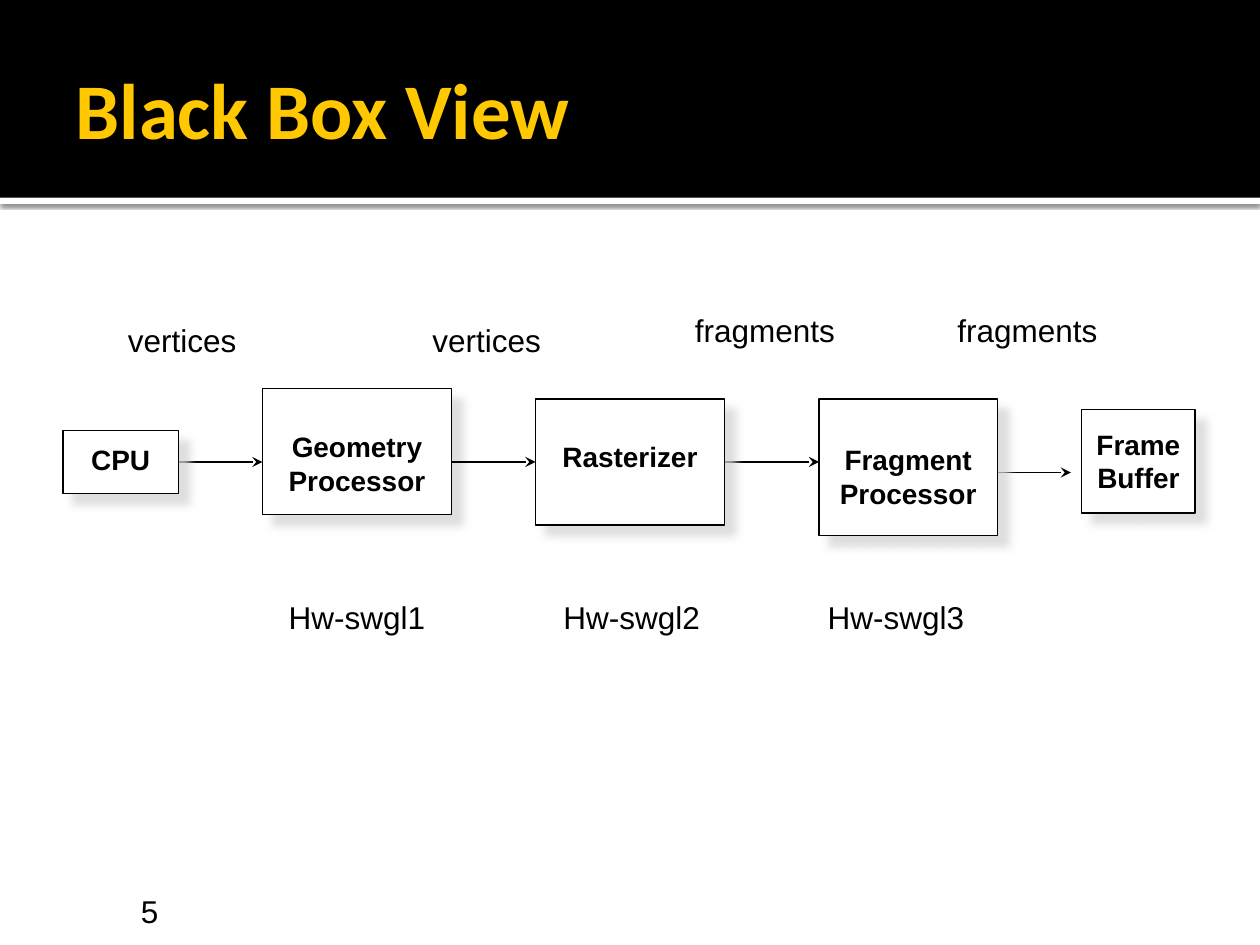
"""Build the Black Box View slide of a graphics pipeline."""
import pptx
import pptx.dml.color
import pptx.enum.shapes
import pptx.enum.text
import pptx.oxml
import pptx.oxml.ns
import pptx.util

Pt = pptx.util.Pt
RGBColor = pptx.dml.color.RGBColor
ANCHOR = pptx.enum.text.MSO_ANCHOR
ALIGN = pptx.enum.text.PP_ALIGN

BLACK = RGBColor(0x00, 0x00, 0x00)
WHITE = RGBColor(0xFF, 0xFF, 0xFF)
GOLD = RGBColor(0xFF, 0xC8, 0x00)
SHADOW_GRAY = RGBColor(0xD4, 0xD4, 0xD6)

STAGES = [
    ((150, 222, 108, 72), ["Geometry", "Processor"], 20),
    ((36, 246, 66, 36), ["CPU"], 3.5),
    ((306, 228, 108, 72), ["Rasterizer"], 19.5),
    ((468, 228, 102, 78), ["Fragment", "Processor"], 21.5),
    ((618, 234, 65, 59), ["Frame", "Buffer"], 6.5),
]
ARROWS = [(102, 150, 264), (258, 306, 264), (414, 468, 264), (570, 612, 270)]
FLOW_LABELS = [
    ("vertices", (66, 180, 89, 36)),
    ("vertices", (240, 180, 89, 36)),
    ("fragments", (390, 174, 110, 36)),
    ("fragments", (540, 174, 110, 36)),
]
HARDWARE_LABELS = [
    ("Hw-swgl1", (150, 338, 108, 29)),
    ("Hw-swgl2", (307, 338, 108, 29)),
    ("Hw-swgl3", (458, 338, 108, 29)),
]


def points(box):
    """Turn a box of numbers into lengths."""
    return [Pt(length) for length in box]


def add_effects(shape, xml=""):
    """Give a shape an effect list with the given content."""
    shape.element.spPr.append(pptx.oxml.parse_xml(
        f'<a:effectLst {pptx.oxml.ns.nsdecls("a")}>{xml}</a:effectLst>'))


def add_shadow(shape, color, opacity, blur, distance, angle):
    """Cast an outer shadow from a shape."""
    add_effects(shape, (
        f'<a:outerShdw blurRad="{Pt(blur)}" dist="{Pt(distance)}" '
        f'dir="{angle * 60000}" algn="ctr" rotWithShape="0">'
        f'<a:srgbClr val="{color}"><a:alpha val="{opacity * 1000}"/></a:srgbClr>'
        '</a:outerShdw>'))


def add_rectangle(shapes, box, fill):
    """Add a plain filled rectangle."""
    rectangle = shapes.add_shape(
        pptx.enum.shapes.MSO_SHAPE.RECTANGLE, *points(box))
    rectangle.fill.solid()
    rectangle.fill.fore_color.rgb = fill
    rectangle.line.fill.background()
    return rectangle


def add_text(shapes, box, lines, size=18, bold=False, align=ALIGN.LEFT, wrap=False):
    """Add black Arial text, one paragraph a line."""
    textbox = shapes.add_textbox(*points(box))
    frame = textbox.text_frame
    frame.word_wrap = wrap
    frame.text = "\n".join(lines)
    for paragraph in frame.paragraphs:
        paragraph.alignment = align
        paragraph.font.name = "Arial"
        paragraph.font.size = Pt(size)
        paragraph.font.bold = bold
        paragraph.font.color.rgb = BLACK
    return frame


def add_header(slide, box, heading):
    """Place the title over a black band with a white rule beneath it."""
    left, top, width, height = box
    rule = add_rectangle(slide.shapes, (left, top + height, width, 3.6), WHITE)
    add_shadow(rule, BLACK, 60, 2.5, 0.8, 90)
    band = add_rectangle(slide.shapes, box, BLACK)
    band.shadow.inherit = False

    title = slide.shapes.title
    title.element.addprevious(rule.element)
    title.element.addprevious(band.element)
    title.left, title.top, title.width, title.height = points(
        (left + 36, top + 12, width - 72, 99))
    frame = title.text_frame
    frame.text = heading
    frame.auto_size = pptx.enum.text.MSO_AUTO_SIZE.NONE
    frame.vertical_anchor = ANCHOR.MIDDLE
    frame.margin_left = Pt(7.2)
    frame.margin_top = frame.margin_right = frame.margin_bottom = Pt(3.6)
    paragraph = frame.paragraphs[0]
    paragraph.alignment = ALIGN.LEFT
    paragraph.font.name = "Calibri"
    paragraph.font.size = Pt(45)
    paragraph.font.bold = True
    paragraph.font.color.rgb = GOLD


def add_stage(slide, box, lines, text_offset):
    """Group a shadowed box with its bold caption."""
    left, top, width, _ = box
    stage = slide.shapes.add_group_shape()
    frame = add_rectangle(stage.shapes, box, WHITE)
    frame.line.color.rgb = BLACK
    frame.line.width = Pt(1)
    add_shadow(frame, SHADOW_GRAY, 75, 5, 8.5, 45)
    caption_box = (left, top + text_offset, width, 7.2 + 19.4 * len(lines))
    add_text(stage.shapes, caption_box, lines, 16, True, ALIGN.CENTER)


def add_arrow(slide, start, end, level):
    """Draw a horizontal arrow between two stages."""
    arrow = slide.shapes.add_connector(
        pptx.enum.shapes.MSO_CONNECTOR.STRAIGHT,
        *points((start, level, end, level)))
    arrow.line.color.rgb = BLACK
    arrow.line.width = Pt(1)
    arrow.line._get_or_add_ln().append(pptx.oxml.parse_xml(
        f'<a:tailEnd {pptx.oxml.ns.nsdecls("a")} type="stealth"/>'))
    add_effects(arrow)


def add_pipeline(slide):
    """Draw the stages, the arrows between them and their labels."""
    add_stage(slide, *STAGES[0])
    for arrow in ARROWS:
        add_arrow(slide, *arrow)
    for stage in STAGES[1:]:
        add_stage(slide, *stage)
    for label, box in FLOW_LABELS:
        add_text(slide.shapes, box, [label])
    for label, box in HARDWARE_LABELS:
        add_text(slide.shapes, box, [label], align=ALIGN.CENTER, wrap=True)


def add_page_number(slide, box, number):
    """Place the page number at the foot of the slide."""
    frame = add_text(slide.shapes, box, [number], wrap=True)
    frame.vertical_anchor = ANCHOR.BOTTOM
    frame.margin_left = Pt(44.5)
    frame.margin_bottom = 0


def main():
    """Build and save the slide."""
    presentation = pptx.Presentation()
    presentation.slide_width = Pt(720)
    presentation.slide_height = Pt(540)
    slide = presentation.slides.add_slide(presentation.slide_layouts[5])
    add_header(slide, (0, 0, 720, 113), "Black Box View")
    add_pipeline(slide)
    add_page_number(slide, (36, 510, 168, 21.5), "5")
    presentation.save("out.pptx")


if __name__ == "__main__":
    main()
